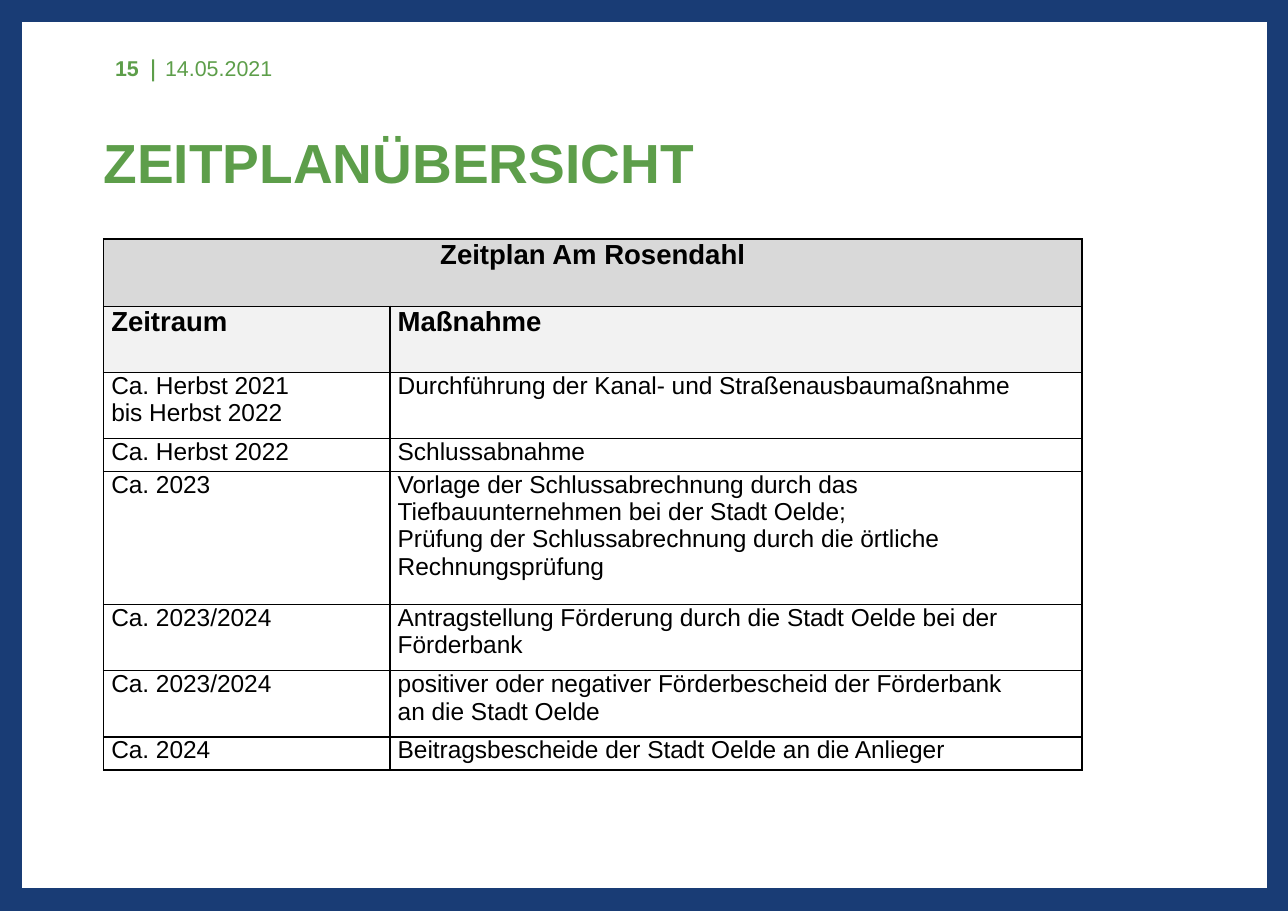
from lxml import etree
from pptx import Presentation
from pptx.dml.color import RGBColor
from pptx.enum.shapes import MSO_SHAPE
from pptx.enum.text import MSO_ANCHOR, PP_ALIGN
from pptx.oxml.ns import qn
from pptx.util import Inches, Pt

RECT = MSO_SHAPE.RECTANGLE
TOP, MIDDLE = MSO_ANCHOR.TOP, MSO_ANCHOR.MIDDLE
LEFT, CENTER, RIGHT = PP_ALIGN.LEFT, PP_ALIGN.CENTER, PP_ALIGN.RIGHT

BLUE, GREEN, BLACK, WHITE = "193C75", "5D9E4A", "000000", "FFFFFF"
TITLE_FILL, HEAD_FILL = "D9D9D9", "F2F2F2"

SCHEDULE = [
    ("Ca. Herbst 2021\vbis Herbst 2022", "Durchführung der Kanal- und Straßenausbaumaßnahme"),
    ("Ca. Herbst 2022", "Schlussabnahme"),
    ("Ca. 2023", "Vorlage der Schlussabrechnung durch das\vTiefbauunternehmen bei der Stadt Oelde;\n"
                 "Prüfung der Schlussabrechnung durch die örtliche\vRechnungsprüfung"),
    ("Ca. 2023/2024", "Antragstellung Förderung durch die Stadt Oelde bei der\vFörderbank"),
    ("Ca. 2023/2024", "positiver oder negativer Förderbescheid der Förderbank\van die Stadt Oelde"),
    ("Ca. 2024", "Beitragsbescheide der Stadt Oelde an die Anlieger"),
]
COLUMNS = [2.6, 6.28]
ROWS = [0.61, 0.6, 0.6, 0.3, 1.21, 0.6, 0.6, 0.3]


def rgb(color):
    return RGBColor.from_string(color)


class Deck:
    font = "Arial"

    def __init__(self, width, height):
        self.prs = Presentation()
        self.prs.slide_width, self.prs.slide_height = Inches(width), Inches(height)
        self.s = self.prs.slides.add_slide(self.prs.slide_layouts[6])

    def fill_text(self, tf, text, size, color, bold=False, align=LEFT, spacing=None):
        tf.word_wrap = True
        tf.text = text
        for p in tf.paragraphs:
            p.alignment = align
            p.line_spacing = spacing
            p.font.name, p.font.size, p.font.bold = self.font, Pt(size), bold
            p.font.color.rgb = rgb(color)

    def rect(self, x, y, w, h, fill=None, line=None, line_width=0):
        sp = self.s.shapes.add_shape(RECT, Inches(x), Inches(y), Inches(w), Inches(h))
        sp.shadow.inherit = False
        if fill:
            sp.fill.solid()
            sp.fill.fore_color.rgb = rgb(fill)
        else:
            sp.fill.background()
        if line:
            sp.line.color.rgb = rgb(line)
            sp.line.width = Pt(line_width)
            ln = sp._element.spPr.find(qn("a:ln"))
            etree.SubElement(ln, qn("a:miter"), lim="800000")
        else:
            sp.line.fill.background()

    def text(self, x, y, w, h, text, size, anchor=MIDDLE, inset=None, **style):
        tf = self.s.shapes.add_textbox(Inches(x), Inches(y), Inches(w), Inches(h)).text_frame
        tf.vertical_anchor = anchor
        if inset is not None:
            tf.margin_left = tf.margin_right = tf.margin_top = tf.margin_bottom = Inches(inset)
        self.fill_text(tf, text, size, GREEN, **style)

    def cell(self, cell, text, size, fill, **style):
        cell.margin_left = cell.margin_right = Inches(0.07)
        cell.margin_top = cell.margin_bottom = 0
        self.fill_text(cell.text_frame, text, size, BLACK, **style)
        # Borders come before the fill in the cell properties
        tcPr = cell._tc.get_or_add_tcPr()
        for side in ("lnL", "lnR", "lnT", "lnB"):
            ln = etree.SubElement(tcPr, qn(f"a:{side}"), w=str(Pt(1)))
            solid = etree.SubElement(ln, qn("a:solidFill"))
            etree.SubElement(solid, qn("a:srgbClr"), val=BLACK)
        cell.fill.solid()
        cell.fill.fore_color.rgb = rgb(fill)

    def table(self, x, y, columns, rows):
        table = self.s.shapes.add_table(len(rows), len(columns), Inches(x), Inches(y),
                                        Inches(sum(columns)), Inches(sum(rows))).table
        for column, width in zip(table.columns, columns):
            column.width = Inches(width)
        for row, height in zip(table.rows, rows):
            row.height = Inches(height)
        return table


def main():
    deck = Deck(11.69, 8.27)

    # Frame and page header
    deck.rect(0.1, 0.1, 11.5, 8.07, line=BLUE, line_width=15)
    deck.rect(1.38, 0.54, 0.02, 0.2, fill=GREEN)
    deck.text(1.4, 0.4, 2.63, 0.44, "14.05.2021", 14)
    deck.text(0.5, 0.4, 0.86, 0.44, "15", 14, bold=True, align=RIGHT)

    # Title
    deck.text(0.94, 1.24, 8.45, 0.79, "ZEITPLANÜBERSICHT", 36, anchor=TOP, inset=0,
              bold=True, spacing=Pt(38))

    # Schedule table
    table = deck.table(0.94, 2.17, COLUMNS, ROWS)
    table.cell(0, 0).merge(table.cell(0, 1))
    for col, title in enumerate(("Zeitplan Am Rosendahl", "")):
        deck.cell(table.cell(0, col), title, 18, TITLE_FILL, bold=True, align=CENTER)
    for col, heading in enumerate(("Zeitraum", "Maßnahme")):
        deck.cell(table.cell(1, col), heading, 18, HEAD_FILL, bold=True)
    for row, entry in enumerate(SCHEDULE, start=2):
        for col, text in enumerate(entry):
            deck.cell(table.cell(row, col), text, 16, WHITE)

    deck.prs.save("out.pptx")


if __name__ == "__main__":
    main()
